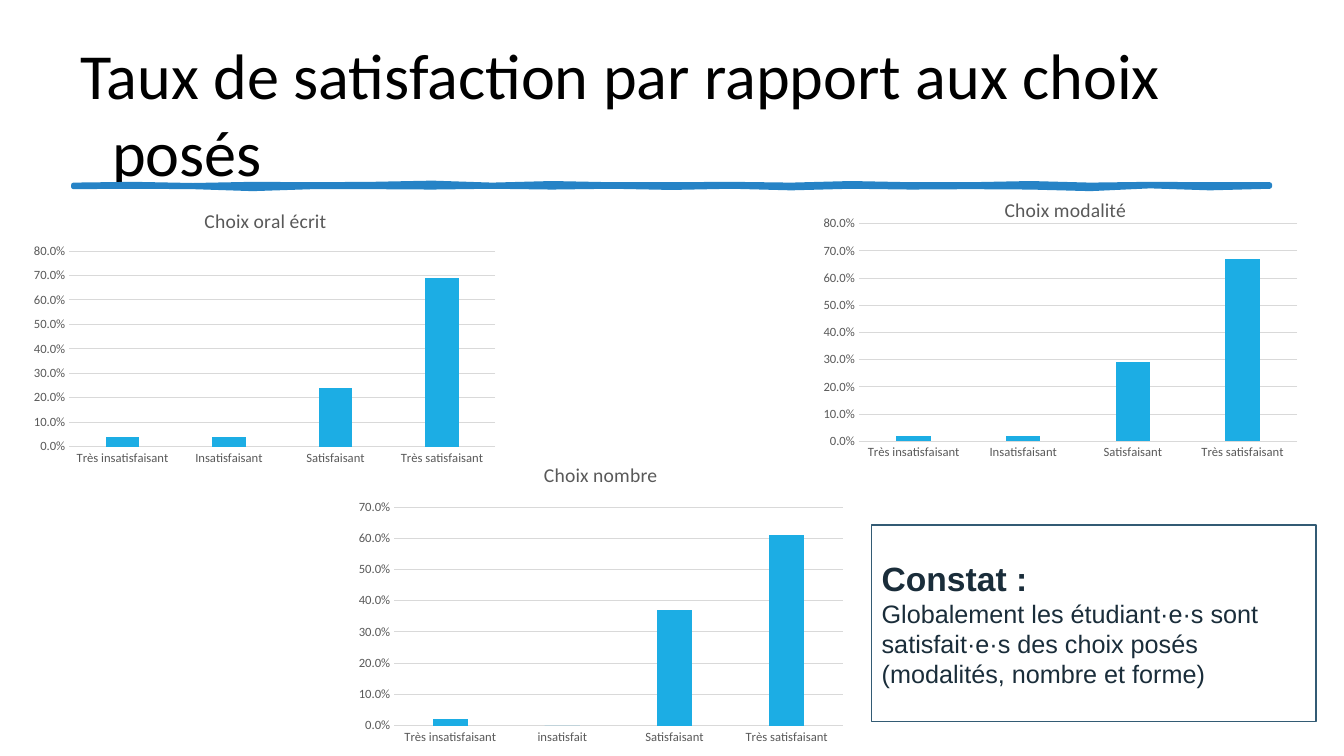
from lxml.etree import SubElement
from pptx import Presentation
from pptx.chart.data import CategoryChartData as Data
from pptx.dml.color import RGBColor as Rgb
from pptx.enum.chart import XL_CHART_TYPE as Kind, XL_TICK_MARK as Tick
from pptx.enum.shapes import MSO_SHAPE as Form
from pptx.enum.text import MSO_ANCHOR as Anchor, MSO_AUTO_SIZE as Auto, PP_ALIGN as Align
from pptx.oxml.ns import qn
from pptx.util import Cm, Pt

# Content
TITLE = "Taux de satisfaction par rapport aux choix posés"
CATS = ["Très insatisfaisant", "Insatisfaisant", "Satisfaisant", "Très satisfaisant"]
CHARTS = [
    dict(name="Choix oral écrit", cats=CATS, vals=(0.04, 0.04, 0.24, 0.69), top=0.8,
         at=(0.66, 4.85, 12.06, 7.04), plot=(0.09, 0.21, 0.89, 0.7)),
    dict(name="Choix modalité", cats=CATS, vals=(0.02, 0.02, 0.29, 0.67), top=0.8,
         at=(20.5, 4.57, 12.7, 7.62), plot=(0.09, 0.14, 0.87, 0.72)),
    dict(name="Choix nombre", cats=[CATS[0], "insatisfait", *CATS[2:]],
         vals=(0.02, 0, 0.37, 0.61), top=0.7,
         at=(8.79, 11.25, 12.7, 7.65), plot=(0.09, 0.2, 0.89, 0.72)),
]
NOTE = [
    ("Constat : ", dict(size=Pt(24), bold=True)),
    ("Globalement les étudiant·e·s sont satisfait·e·s des choix posés "
     "(modalités, nombre et forme)", dict(size=Pt(18), bold=False)),
]
HUES = dict(title="000000", wave="2683C6", bar="1CADE4", label="595959",
            grid="D9D9D9", edge="335B74", ink="1A2D3A", paper="FFFFFF")

# Brush stroke: height of both edges in cm, at equal steps
UPPER = (4.66, 4.64, 4.67, 4.64, 4.65, 4.64, 4.61, 4.66, 4.62, 4.65, 4.65,
         4.64, 4.66, 4.62, 4.65, 4.65, 4.62, 4.66, 4.64, 4.65, 4.65)
LOWER = (4.71, 4.7, 4.71, 4.76, 4.71, 4.71, 4.72, 4.7, 4.72, 4.7, 4.73,
         4.7, 4.74, 4.7, 4.72, 4.71, 4.72, 4.76, 4.69, 4.74, 4.7)
LEFT, WIDTH = 1.85, 30.15


def hue(key):
    return Rgb.from_string(HUES[key])


def style(font, key, **form):
    for name, val in form.items():
        setattr(font, name, val)
    font.color.rgb = hue(key)


def paint(shape, fill, line, width):
    shape.shadow.inherit = False
    shape.fill.solid()
    shape.fill.fore_color.rgb = hue(fill)
    shape.line.color.rgb = hue(line)
    shape.line.width = Pt(width)


def add_bars(slide, name, cats, vals, top, at, plot):
    data = Data(number_format="0.0%")
    data.categories = cats
    data.add_series(name, vals)
    chart = slide.shapes.add_chart(Kind.COLUMN_CLUSTERED, *map(Cm, at), data).chart
    chart.has_legend = False
    chart.font.name, chart.font.size = "Calibri", Pt(10)
    chart.has_title = True
    text = chart.chart_title.text_frame
    text.text = name
    style(text.paragraphs[0].runs[0].font, "label", name="Calibri", size=Pt(14), bold=False)
    chart.chart_title.include_in_layout = False

    # Bars
    bars = chart.plots[0]
    bars.gap_width, bars.overlap, bars.vary_by_categories = 219, -27, False
    fill = bars.series[0].format.fill
    fill.solid()
    fill.fore_color.rgb = hue("bar")

    # Axes
    for axis in (chart.category_axis, chart.value_axis):
        axis.major_tick_mark = axis.minor_tick_mark = Tick.NONE
        style(axis.tick_labels.font, "label", name="Calibri", size=Pt(9))
    axis.minimum_scale, axis.maximum_scale, axis.major_unit = 0, top, 0.1
    axis.tick_labels.number_format = "0.0%"
    axis.tick_labels.number_format_is_linked = False
    axis.format.line.fill.background()
    for line in (axis.major_gridlines.format.line, chart.category_axis.format.line):
        line.color.rgb = hue("grid")
        line.width = Pt(0.75)

    # Inner plot area, as shares of the chart
    area = chart.element.find(".//" + qn("c:plotArea"))
    for old in area.findall(qn("c:layout")):
        area.remove(old)
    box = SubElement(area, qn("c:layout"))
    area.insert(0, box)
    frame = SubElement(box, qn("c:manualLayout"))
    rules = dict(layoutTarget="inner", xMode="edge", yMode="edge", **dict(zip("xywh", plot)))
    for tag, val in rules.items():
        SubElement(frame, qn("c:" + tag)).set("val", str(val))


def main():
    deck = Presentation()
    deck.slide_width, deck.slide_height = Cm(33.87), Cm(19.05)
    slide = deck.slides.add_slide(deck.slide_layouts[5])

    # Title with hanging indent
    title = slide.shapes.title
    title.left, title.top, title.width, title.height = map(Cm, (0.51, 0.99, 33.02, 3.68))
    text = title.text_frame
    text.text = TITLE
    text.auto_size, text.vertical_anchor = Auto.NONE, Anchor.MIDDLE
    para = text.paragraphs[0]
    para.alignment = Align.LEFT
    props = para._p.get_or_add_pPr()
    props.set("marL", str(Cm(2.06)))
    props.set("indent", str(Cm(-0.79)))
    style(para.runs[0].font, "title", name="Calibri", size=Pt(45.9))

    # Brush stroke under the title
    step = WIDTH / (len(UPPER) - 1)
    edges = [[(Cm(LEFT + i * step), Cm(y)) for i, y in enumerate(row)]
             for row in (UPPER, LOWER)]
    dots = edges[0] + edges[1][::-1]
    pen = slide.shapes.build_freeform(*dots[0])
    pen.add_line_segments(dots[1:], close=True)
    paint(pen.convert_to_shape(), "wave", "wave", 3.25)

    for chart in CHARTS:
        add_bars(slide, **chart)

    # Finding
    box = slide.shapes.add_shape(Form.RECTANGLE, *map(Cm, (21.97, 13.23, 11.2, 4.95)))
    paint(box, "paper", "edge", 1)
    text = box.text_frame
    text.word_wrap, text.vertical_anchor = True, Anchor.MIDDLE
    for i, (words, form) in enumerate(NOTE):
        para = text.add_paragraph() if i else text.paragraphs[0]
        para.alignment = Align.LEFT
        run = para.add_run()
        run.text = words
        style(run.font, "ink", name="Arial", **form)

    deck.save("out.pptx")


if __name__ == "__main__":
    main()
